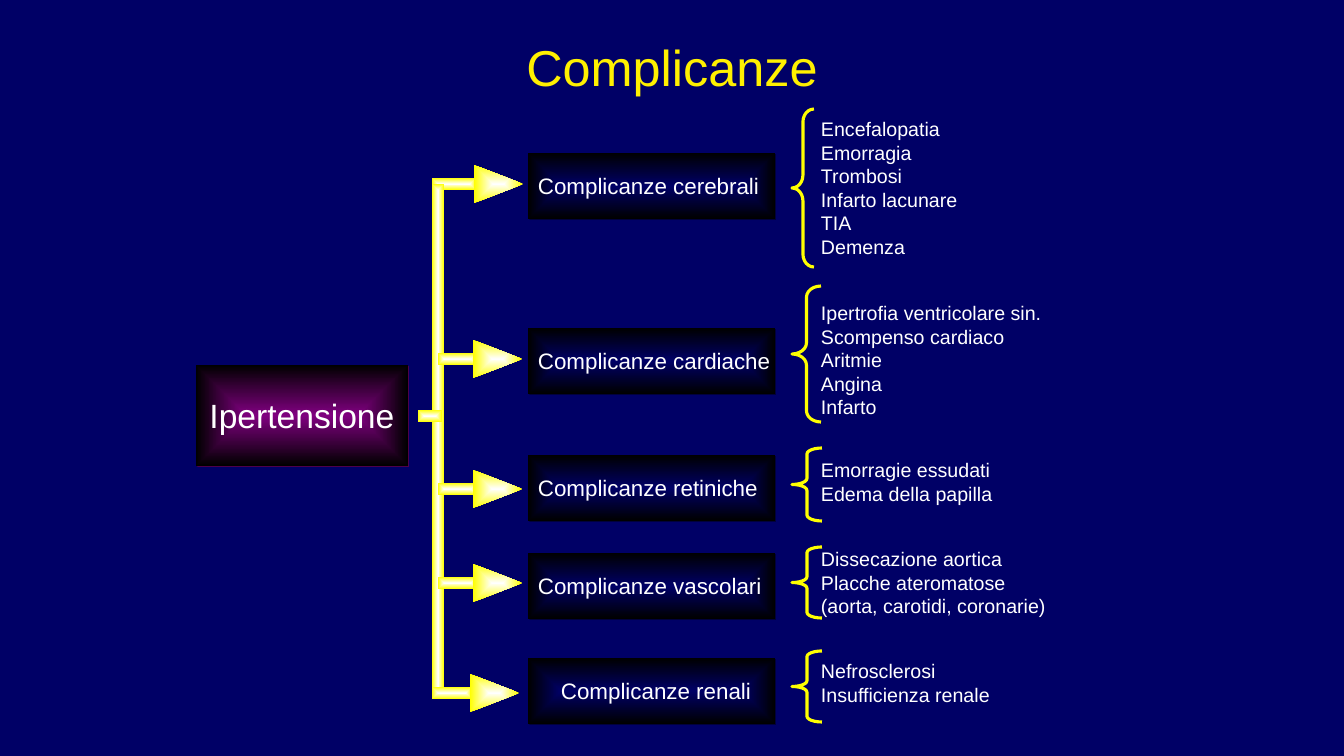
from pptx import Presentation
from pptx.dml.color import RGBColor
from pptx.enum.shapes import MSO_SHAPE
from pptx.enum.text import MSO_ANCHOR, PP_ALIGN
from pptx.oxml import parse_xml
from pptx.oxml.ns import nsdecls, qn
from pptx.util import Emu, Pt

EMU_PER_PX = 914400 / 100.8

NAVY = RGBColor(0x00, 0x00, 0x66)
NAVY_SHADOW = RGBColor(0x00, 0x00, 0x3C)
PURPLE = RGBColor(0x80, 0x00, 0x80)
PURPLE_SHADOW = RGBColor(0x4C, 0x00, 0x4C)
BLACK = RGBColor(0x00, 0x00, 0x00)
WHITE = RGBColor(0xFF, 0xFF, 0xFF)
YELLOW = RGBColor(0xFF, 0xFF, 0x00)
TITLE_YELLOW = RGBColor(0xFF, 0xF0, 0x00)

# Label, box top, label inset, brace (top, width, height, curl), list top, items
BRANCHES = [
    ("Complicanze cerebrali", 153, 10, (109, 22, 158, 0.585), 117,
     ["Encefalopatia", "Emorragia", "Trombosi", "Infarto lacunare", "TIA", "Demenza"]),
    ("Complicanze cardiache", 328, 10, (286, 29, 136, 0.385), 301,
     ["Ipertrofia ventricolare sin.", "Scompenso cardiaco", "Aritmie", "Angina", "Infarto"]),
    ("Complicanze retiniche", 455, 10, (448, 30, 73, 0.2), 458,
     ["Emorragie essudati", "Edema della papilla"]),
    ("Complicanze vascolari", 553, 10, (547, 30, 71, 0.19), 547,
     ["Dissecazione aortica", "Placche ateromatose", "(aorta, carotidi, coronarie)"]),
    ("Complicanze renali", 658, 33, (651, 30, 71, 0.19), 659,
     ["Nefrosclerosi", "Insufficienza renale"]),
]
# Stem left, stem width, head left, centre line
ARROWS = [
    (432, 44, 474, 184),
    (438, 39, 473, 359),
    (438, 39, 473, 489),
    (438, 39, 473, 583),
    (432, 40, 470, 693),
]
BAR = 12


def px(n):
    return Emu(round(n * EMU_PER_PX))


def write(tf, text, size, color=WHITE, align=PP_ALIGN.LEFT, anchor=MSO_ANCHOR.TOP,
          wrap=True, margins=(0, 0, 0, 0), spacing=None):
    tf.word_wrap = wrap
    tf.vertical_anchor = anchor
    tf.margin_left, tf.margin_top, tf.margin_right, tf.margin_bottom = map(px, margins)
    for i, line in enumerate(text.split("\n")):
        p = tf.add_paragraph() if i else tf.paragraphs[0]
        p.alignment = align
        if spacing:
            p.line_spacing = spacing
        r = p.add_run()
        r.text = line
        r.font.name = "Arial"
        r.font.size = Pt(size)
        r.font.color.rgb = color


class Diagram:
    def __init__(self, slide):
        self.slide = slide
        self.shapes = slide.shapes
        fill = slide.background.fill
        fill.solid()
        fill.fore_color.rgb = NAVY

    def glow(self, sp, inner, outer, kind="shape"):
        """Fill from the centre outwards, without an outline."""
        sp.shadow.inherit = False
        sp.line.fill.background()
        sp.fill.gradient()
        for stop, color in zip(sp.fill.gradient_stops, (inner, outer)):
            stop.color.rgb = color
        grad = sp.element.spPr.find(qn("a:gradFill"))
        grad.replace(grad.find(qn("a:lin")), parse_xml(
            f'<a:path {nsdecls("a")} path="{kind}">'
            '<a:fillToRect l="50000" t="50000" r="50000" b="50000"/></a:path>'))

    def rect(self, x, y, w, h, inner=WHITE, outer=YELLOW):
        sp = self.shapes.add_shape(MSO_SHAPE.RECTANGLE, px(x), px(y), px(w), px(h))
        self.glow(sp, inner, outer)
        return sp

    def box(self, x, y, w, h, text, inner, shadow, **fmt):
        sp = self.rect(x, y, w, h, inner, BLACK)
        sp.element.spPr.find(qn("a:effectLst")).append(parse_xml(
            f'<a:outerShdw {nsdecls("a")} blurRad="0" dist="17780" dir="2700000">'
            f'<a:srgbClr val="{shadow}"/></a:outerShdw>'))
        write(sp.text_frame, text, anchor=MSO_ANCHOR.MIDDLE, **fmt)

    def text(self, x, y, w, h, text, **fmt):
        tb = self.shapes.add_textbox(px(x), px(y), px(w), px(h))
        write(tb.text_frame, text, **fmt)

    def arrow(self, x, w, head, cy):
        self.rect(x, cy - BAR // 2, w, BAR)
        fb = self.shapes.build_freeform(head, cy - 19, scale=EMU_PER_PX)
        fb.add_line_segments([(head + 49, cy), (head, cy + 19)], close=True)
        self.glow(fb.convert_to_shape(), WHITE, YELLOW, "rect")

    def brace(self, x, y, w, h, curl):
        sp = self.shapes.add_shape(MSO_SHAPE.LEFT_BRACE, px(x), px(y), px(w), px(h))
        sp.shadow.inherit = False
        sp.adjustments[0] = curl
        sp.fill.background()
        sp.line.color.rgb = YELLOW
        sp.line.width = Pt(2.25)


def main():
    prs = Presentation()
    prs.slide_width, prs.slide_height = px(1344), px(756)
    d = Diagram(prs.slides.add_slide(prs.slide_layouts[6]))

    # Title
    d.text(168, 39, 1008, 63, "Complicanze", size=36, color=TITLE_YELLOW,
           align=PP_ALIGN.CENTER, anchor=MSO_ANCHOR.MIDDLE,
           margins=(9, 4, 9, 4), spacing=0.9)

    # Cause
    d.box(196, 365, 212, 101, "Ipertensione", PURPLE, PURPLE_SHADOW,
          size=24, align=PP_ALIGN.CENTER)

    # Complications with their lists
    for label, top, inset, (by, bw, bh, curl), list_top, items in BRANCHES:
        d.box(528, top, 247, 66, label, NAVY, NAVY_SHADOW,
              size=16, margins=(inset, 0, 0, 0))
        d.brace(792, by, bw, bh, curl)
        d.text(821, list_top, 230, 23 * len(items), "\n".join(items), size=14, wrap=False)

    # Arrow tree: the trunk lies over the first branch and under the others
    d.arrow(*ARROWS[0])
    d.rect(432, 184, BAR, 509)
    for arrow in ARROWS[1:]:
        d.arrow(*arrow)
    d.rect(418, 410, 24, BAR)

    prs.save("out.pptx")


if __name__ == "__main__":
    main()
